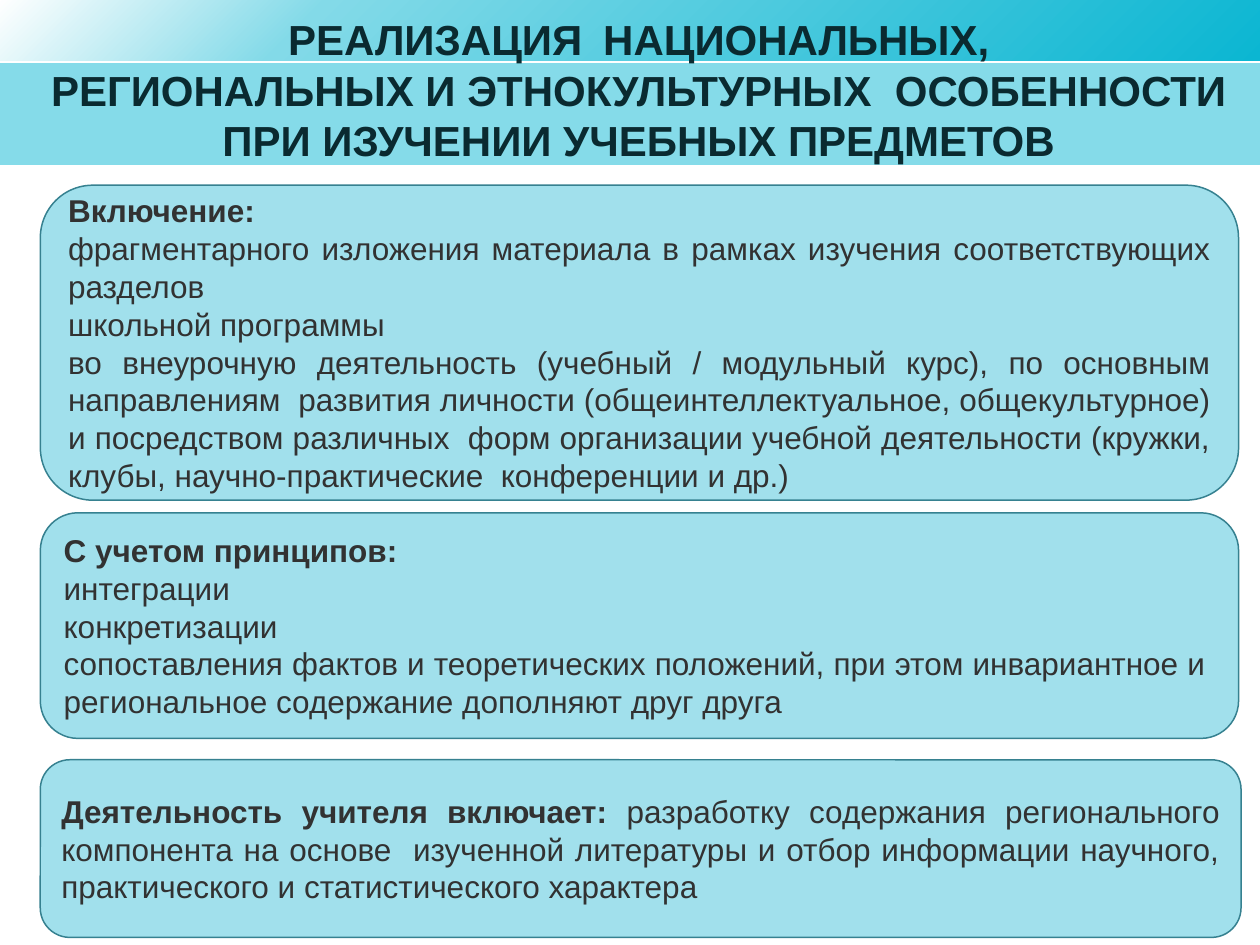
from lxml.etree import SubElement
from pptx import Presentation
from pptx.dml.color import RGBColor as RGB
from pptx.enum.shapes import MSO_SHAPE as Shape
from pptx.enum.text import MSO_ANCHOR as Anchor, PP_ALIGN as Align
from pptx.oxml.ns import qn
from pptx.util import Inches, Pt

# Content: a paragraph is a list of (text, bold) runs
TITLE = [
    [("РЕАЛИЗАЦИЯ\tНАЦИОНАЛЬНЫХ,", True)],
    [("РЕГИОНАЛЬНЫХ И ЭТНОКУЛЬТУРНЫХ  ОСОБЕННОСТИ ПРИ ИЗУЧЕНИИ УЧЕБНЫХ ПРЕДМЕТОВ", True)],
]
PANELS = [
    {"top": 1.47, "width": 9.51, "height": 2.5, "paragraphs": [
        [("Включение:", True)],
        [("фрагментарного изложения материала в рамках изучения соответствующих разделов", False)],
        [("школьной программы", False)],
        [("во внеурочную деятельность (учебный / модульный курс), по основным "
          "направлениям  развития личности (общеинтеллектуальное, общекультурное) "
          "и посредством различных  форм организации учебной деятельности (кружки, "
          "клубы, научно-практические  конференции и др.)", False)],
    ]},
    {"top": 4.07, "width": 9.51, "height": 1.79, "paragraphs": [
        [("С учетом принципов:", True)],
        [("интеграции", False)],
        [("конкретизации", False)],
        [("сопоставления фактов и теоретических положений, при этом инвариантное и  "
          "региональное содержание дополняют друг друга", False)],
    ]},
    {"top": 6.03, "width": 9.53, "height": 1.41, "paragraphs": [
        [("Деятельность учителя включает: ", True),
         ("разработку содержания регионального компонента на основе  изученной "
          "литературы и отбор информации научного, практического и статистического "
          "характера", False)],
    ]},
]
PANEL_LEFT = 0.32

THEME = {
    "font": "Arial", "title_size": 24, "body_size": 18,
    "title": "0A2A30", "body": "323232",
    "band": "85DBE9", "panel": "A1E0EC", "outline": "368190", "outline_width": 0.85,
    "glow": [(0, "0BB6D2"), (75, "83DAE8"), (100, "FFFFFF")],
}


def add_block(slide, kind, box, color):
    block = slide.shapes.add_shape(kind, *map(Inches, box))
    block.shadow.inherit = False
    block.fill.solid()
    block.fill.fore_color.rgb = RGB.from_string(color)
    block.line.fill.background()
    return block


def apply_glow(block, stops):
    """Radial gradient centred on the bottom right corner."""
    block.fill.gradient()
    grad = block._element.spPr.find(qn("a:gradFill"))
    for child in list(grad):
        grad.remove(child)
    stop_list = SubElement(grad, qn("a:gsLst"))
    for percent, color in stops:
        stop = SubElement(stop_list, qn("a:gs"), pos=str(percent * 1000))
        SubElement(stop, qn("a:srgbClr"), val=color)
    radial = SubElement(grad, qn("a:path"), {"path": "circle"})
    SubElement(radial, qn("a:fillToRect"), l="100000", t="100000")


def write(frame, paragraphs, align, size, color):
    frame.word_wrap = True
    for index, runs in enumerate(paragraphs):
        paragraph = frame.add_paragraph() if index else frame.paragraphs[0]
        paragraph.alignment = align
        for text, bold in runs:
            run = paragraph.add_run()
            run.text = text
            run.font.name = THEME["font"]
            run.font.size = Pt(size)
            run.font.bold = bold
            run.font.color.rgb = RGB.from_string(color)


def main():
    deck = Presentation()
    deck.slide_width, deck.slide_height = Inches(10), Inches(7.5)
    slide = deck.slides.add_slide(deck.slide_layouts[6])

    # Header bands
    top_band = add_block(slide, Shape.RECTANGLE, (0, -0.02, 10, 0.5), THEME["band"])
    apply_glow(top_band, THEME["glow"])
    add_block(slide, Shape.RECTANGLE, (0, 0.5, 10, 0.81), THEME["band"])

    # Title
    title = slide.shapes.add_textbox(*map(Inches, (0.07, 0.06, 10, 1.31)))
    write(title.text_frame, TITLE, Align.CENTER, THEME["title_size"], THEME["title"])

    # Rounded panels
    for panel in PANELS:
        box = (PANEL_LEFT, panel["top"], panel["width"], panel["height"])
        block = add_block(slide, Shape.ROUNDED_RECTANGLE, box, THEME["panel"])
        block.line.color.rgb = RGB.from_string(THEME["outline"])
        block.line.width = Pt(THEME["outline_width"])
        block.text_frame.vertical_anchor = Anchor.MIDDLE
        write(block.text_frame, panel["paragraphs"], Align.JUSTIFY,
              THEME["body_size"], THEME["body"])

    deck.save("out.pptx")


if __name__ == "__main__":
    main()
